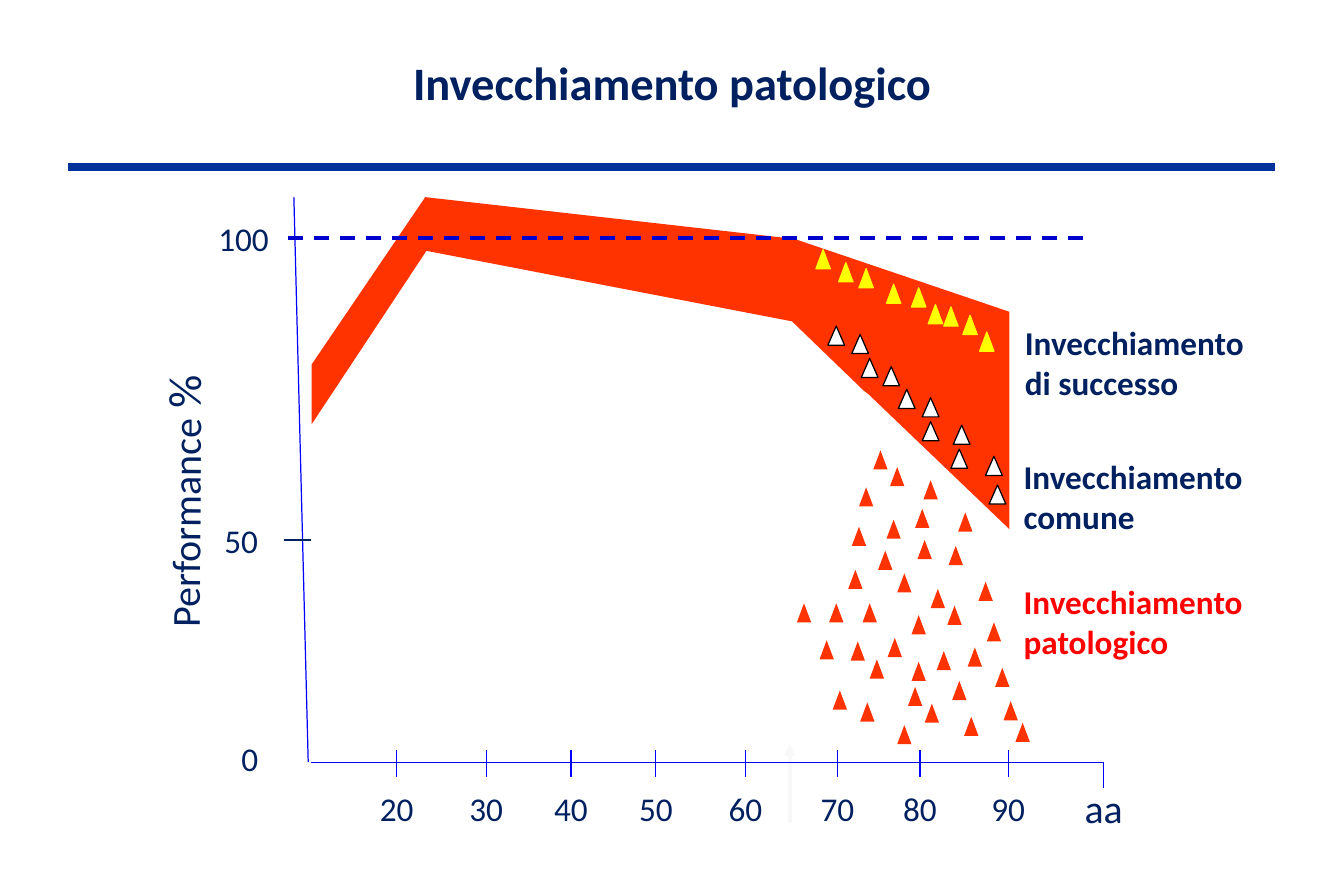
from dataclasses import dataclass

from pptx import Presentation
from pptx.dml.color import RGBColor
from pptx.enum.dml import MSO_LINE
from pptx.enum.shapes import MSO_CONNECTOR, MSO_SHAPE
from pptx.enum.text import MSO_ANCHOR, MSO_AUTO_SIZE, PP_ALIGN
from pptx.oxml.ns import qn
from pptx.util import Cm, Pt
from lxml.etree import SubElement


@dataclass(frozen=True)
class Theme:
    font: str = "Calibri"
    navy: str = "002060"
    rule: str = "003399"
    axis: str = "0000FF"
    dash: str = "0000CC"
    band: str = "FF3300"
    red: str = "FF0000"
    gold: str = "FFFF00"
    white: str = "FFFFFF"
    black: str = "000000"
    pale: str = "F8F8F8"
    title: int = 28
    unit: int = 24
    label: int = 20
    thin: float = 0.75


THEME = Theme()

# Plot frame, in inches
BASE = 6.38
TICKS = [3.32, 4.07, 4.78, 5.49, 6.24, 7.01, 7.7, 8.44]
BAND = [(2.61, 3.05), (3.56, 1.65), (6.65, 2), (8.45, 2.61), (8.45, 4.43),
        (7.27, 3.3), (7.23, 3.27), (6.63, 2.69), (3.57, 2.1), (2.61, 3.55)]

# Top left corners of the markers, in inches
COMMON = [(7.96, 3.76), (8.25, 3.82), (8.28, 4.06), (7.98, 3.56),
          (7.72, 3.33), (6.93, 2.73), (7.21, 3), (7.39, 3.07),
          (7.13, 2.8), (7.52, 3.26), (7.72, 3.53)]
SUCCESS = [(7.9, 2.57), (7.02, 2.2), (7.19, 2.25), (7.42, 2.38), (6.83, 2.09),
           (7.63, 2.41), (8.06, 2.64), (7.77, 2.55), (8.2, 2.78)]
ILL = [(7.42, 4.35), (7.19, 4.08), (7.31, 3.77), (7.68, 4.52), (7.66, 4.26),
       (7.45, 3.91), (8.33, 5.59), (8.19, 4.87), (8.26, 5.21), (7.63, 5.15),
       (7.84, 5.45), (7.1, 4.77), (6.67, 5.05), (7.28, 5.52), (7.51, 4.8),
       (7.94, 4.57), (7.22, 5.05), (7.43, 5.34), (7.79, 4.93), (7.63, 5.54),
       (8.1, 5.42), (7.93, 5.07), (7.35, 4.61), (7.73, 4.02), (7.97, 5.7),
       (8.07, 6), (7.51, 6.07), (6.97, 5.78), (7.2, 5.88), (7.6, 5.75),
       (7.74, 5.89), (8.5, 6.05), (8.4, 5.87), (6.86, 5.36), (7.12, 5.37),
       (7.13, 4.41), (8.02, 4.29), (6.94, 5.05)]


def cm(inch):
    return Cm(inch * 2.54)


def rgb(tint):
    return RGBColor.from_string(tint)


def style(run, size, tint, bold=False):
    font = run.font
    font.name, font.size, font.bold = THEME.font, Pt(size), bold
    font.color.rgb = rgb(tint)


def add_title(slide, text):
    title = slide.shapes.title
    title.left, title.top, title.width, title.height = map(
        cm, (0, 0.4, 11.25, 0.57))
    frame = title.text_frame
    frame.text = text
    frame.auto_size = MSO_AUTO_SIZE.NONE
    frame.vertical_anchor = MSO_ANCHOR.MIDDLE
    frame.paragraphs[0].alignment = PP_ALIGN.CENTER
    style(frame.paragraphs[0].runs[0], THEME.title, THEME.navy, True)


def add_label(slide, text, place, size=THEME.label, tint=THEME.navy,
              bold=False, align=PP_ALIGN.LEFT, wrap=True):
    box = slide.shapes.add_textbox(*map(cm, place))
    frame = box.text_frame
    frame.word_wrap = wrap
    frame.text = text
    for para in frame.paragraphs:
        para.alignment = align
        for run in para.runs:
            style(run, size, tint, bold)
    return box


def add_line(slide, start, end, tint=THEME.axis, width=THEME.thin,
             dash=None, arrow=False):
    line = slide.shapes.add_connector(
        MSO_CONNECTOR.STRAIGHT, *map(cm, start + end))
    line.line.color.rgb = rgb(tint)
    line.line.width = Pt(width)
    if dash:
        line.line.dash_style = dash
    props = line._element.spPr
    if arrow:
        SubElement(props.find(qn("a:ln")), qn("a:tailEnd"), type="triangle")
    SubElement(props, qn("a:effectLst"))


def paint(shape, fill, edge=None):
    shape.shadow.inherit = False
    shape.fill.solid()
    shape.fill.fore_color.rgb = rgb(fill)
    if edge:
        shape.line.color.rgb = rgb(edge)
        shape.line.width = Pt(THEME.thin)
    else:
        shape.line.fill.background()


def add_band(slide):
    points = [(cm(x), cm(y)) for x, y in BAND]
    form = slide.shapes.build_freeform(*points[0], scale=1.0)
    form.add_line_segments(points[1:], close=True)
    paint(form.convert_to_shape(), THEME.band)


def add_marks(slide, spots, width, fill, edge=None):
    for x, y in spots:
        mark = slide.shapes.add_shape(
            MSO_SHAPE.ISOSCELES_TRIANGLE, *map(cm, (x, y, width, 0.16)))
        paint(mark, fill, edge)


def add_axes(slide):
    add_line(slide, (2.46, 1.65), (2.58, BASE))
    add_line(slide, (2.6, BASE), (9.24, BASE))
    add_line(slide, (9.24, BASE), (9.24, 6.6))
    add_line(slide, (2.38, 4.52), (2.6, 4.52), THEME.navy)
    for x, age in zip(TICKS, range(20, 91, 10)):
        add_line(slide, (x, 6.28), (x, 6.5))
        add_label(slide, str(age), (x - 0.25, 6.55, 0.5, 0.44),
                  align=PP_ALIGN.CENTER, wrap=False)
    for text, right, top in (("100", 2.35, 1.78), ("50", 2.26, 4.31),
                             ("0", 2.26, 6.13)):
        add_label(slide, text, (right - 0.63, top, 0.63, 0.44),
                  align=PP_ALIGN.RIGHT, wrap=False)
    add_label(slide, "aa", (8.98, 6.51, 0.62, 0.5), THEME.unit)

    # Upright axis name with a larger percent sign
    name = add_label(slide, "Performance", (0.36, 3.91, 2.33, 0.57),
                     THEME.unit, align=PP_ALIGN.CENTER, wrap=False)
    sign = name.text_frame.paragraphs[0].add_run()
    sign.text = " %"
    style(sign, THEME.title, THEME.navy)
    name.rotation = 270.3


def main():
    deck = Presentation()
    deck.slide_width, deck.slide_height = cm(11.25), cm(7.5)
    slide = deck.slides.add_slide(deck.slide_layouts[5])

    # Heading
    add_title(slide, "Invecchiamento patologico")
    add_line(slide, (0.57, 1.4), (10.67, 1.4), THEME.rule, 4.5)

    # Chart
    add_line(slide, (6.61, 6.89), (6.61, 6.23), THEME.pale, 2.25, arrow=True)
    add_axes(slide)
    add_band(slide)
    add_line(slide, (2.41, 1.99), (9.08, 1.99), THEME.dash, 2.25,
             MSO_LINE.DASH)

    # Markers
    add_marks(slide, COMMON, 0.14, THEME.white, THEME.black)
    add_marks(slide, SUCCESS, 0.12, THEME.gold, THEME.gold)
    add_marks(slide, ILL, 0.12, THEME.band)

    # Names of the three groups
    add_label(slide, "Invecchiamento di successo", (8.48, 2.65, 2.19, 0.77),
              bold=True)
    add_label(slide, "Invecchiamento\ncomune", (8.47, 3.77, 2.07, 0.77),
              bold=True)
    add_label(slide, "Invecchiamento\npatologico", (8.47, 4.82, 2.43, 1.11),
              tint=THEME.red, bold=True)

    deck.save("out.pptx")


if __name__ == "__main__":
    main()
